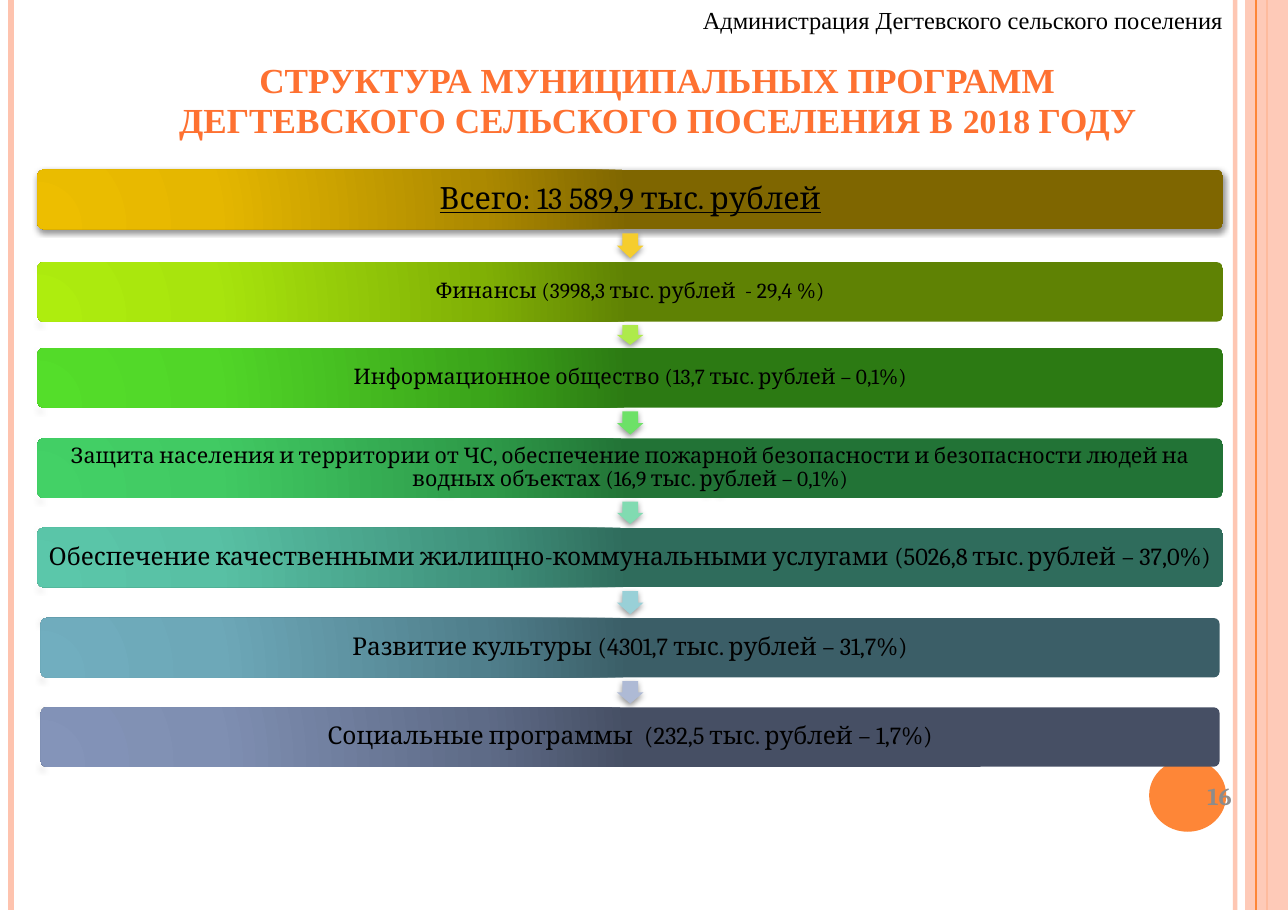
import pptx
import pptx.util
import pptx.dml.color
import pptx.enum.shapes
import pptx.enum.text
import pptx.oxml
import pptx.oxml.ns

Inches = pptx.util.Inches
Pt = pptx.util.Pt
SHAPE = pptx.enum.shapes.MSO_SHAPE
ALIGN = pptx.enum.text.PP_ALIGN
ANCHOR = pptx.enum.text.MSO_ANCHOR
NS = pptx.oxml.ns.nsdecls("a")

WIDTH, HEIGHT = 11.69, 8.26
BAR_HEIGHT = 0.54

# top, width, text, size, gradient colours, colour of the arrow below
PROGRAMS = [
    (1.54, 10.76, "Всего: 13 589,9 тыс. рублей", 20,
     ("EDBE00", "E5B700", "AC8900", "7F6600"), "F5CD2D"),
    (2.38, 10.76, "Финансы (3998,3 тыс. рублей  - 29,4 %)", 14,
     ("AEED0E", "A8E40D", "80B005", "5F8204"), "AEEA4B"),
    (3.16, 10.76, "Информационное общество (13,7 тыс. рублей – 0,1%)", 14,
     ("54DE2A", "51D628", "3BA51A", "2C7A13"), "6DE167"),
    (3.98, 10.76, "Защита населения и территории от ЧС, обеспечение пожарной "
     "безопасности и безопасности людей на водных объектах "
     "(16,9 тыс. рублей – 0,1%)", 14,
     ("43D166", "41CA63", "2E9B49", "227336"), "81DBB1"),
    (4.79, 10.76, "Обеспечение качественными жилищно-коммунальными услугами "
     "(5026,8 тыс. рублей – 37,0%)", 16,
     ("5BC7AA", "58C0A4", "40927C", "2F6C5C"), "99D0D7"),
    (5.61, 10.7, "Развитие культуры (4301,7 тыс. рублей – 31,7%)", 16,
     ("71AEBF", "6DA8B8", "507F8C", "3B5E67"), "AEBAD5"),
    (6.42, 10.7, "Социальные программы  (232,5 тыс. рублей – 1,7%)", 16,
     ("8494B9", "7F8FB2", "5E6B87", "464F64"), None),
]


def color(value):
    return pptx.dml.color.RGBColor.from_string(value)


def set_alpha(properties, percent):
    """Make the solid colour inside the given properties see-through."""
    for element in properties.iter(pptx.oxml.ns.qn("a:srgbClr")):
        element.append(pptx.oxml.parse_xml(f'<a:alpha {NS} val="{percent * 1000}"/>'))


def add_shape(slide, kind, left, top, width, height, fill=None):
    shape = slide.shapes.add_shape(
        kind, Inches(left), Inches(top), Inches(width), Inches(height))
    shape.shadow.inherit = False
    shape.line.fill.background()
    if fill:
        shape.fill.solid()
        shape.fill.fore_color.rgb = color(fill)
    return shape


def add_line(slide, x, hex_color, weight, alpha=100):
    line = slide.shapes.add_connector(
        pptx.enum.shapes.MSO_CONNECTOR.STRAIGHT,
        Inches(x), 0, Inches(x), Inches(HEIGHT))
    line.line.color.rgb = color(hex_color)
    line.line.width = Pt(weight)
    properties = line._element.spPr
    if alpha < 100:
        set_alpha(properties, alpha)
    properties.append(pptx.oxml.parse_xml(f"<a:effectLst {NS}/>"))


def add_shadow(shape):
    effects = shape._element.spPr.find(pptx.oxml.ns.qn("a:effectLst"))
    effects.append(pptx.oxml.parse_xml(
        f'<a:outerShdw {NS} blurRad="{Pt(4)}" dist="{Pt(1.6)}" dir="5400000" '
        'rotWithShape="0"><a:srgbClr val="000000"><a:alpha val="42000"/>'
        '</a:srgbClr></a:outerShdw>'))


def fill_radial(shape, colors):
    stops = "".join(
        f'<a:gs pos="{position}000"><a:srgbClr val="{value}"/></a:gs>'
        for position, value in zip((0, 30, 75, 100), colors))
    shape.fill.gradient()
    properties = shape._element.spPr
    properties.replace(
        properties.find(pptx.oxml.ns.qn("a:gradFill")),
        pptx.oxml.parse_xml(
            f'<a:gradFill {NS} rotWithShape="1"><a:gsLst>{stops}</a:gsLst>'
            '<a:path path="circle"><a:fillToRect l="5000" t="100000" '
            'r="120000" b="10000"/></a:path></a:gradFill>'))


def write(shape, *parts, font="Cambria", hex_color="000000", bold=False,
          underline=False, align=ALIGN.CENTER, anchor=ANCHOR.MIDDLE,
          spacing=None, margins=(0, 0)):
    """Write one paragraph made of (text, size) parts."""
    frame = shape.text_frame
    frame.word_wrap = True
    frame.vertical_anchor = anchor
    frame.margin_left = frame.margin_right = Inches(margins[0])
    frame.margin_top = frame.margin_bottom = Inches(margins[1])
    paragraph = frame.paragraphs[0]
    paragraph.alignment = align
    paragraph.line_spacing = spacing
    for text, size in parts:
        run = paragraph.add_run()
        run.text = text
        run.font.name = font
        run.font.size = Pt(size)
        run.font.bold = bold
        run.font.underline = underline
        run.font.color.rgb = color(hex_color)


def add_text(slide, left, top, width, height, *parts, **format_options):
    box = slide.shapes.add_textbox(
        Inches(left), Inches(top), Inches(width), Inches(height))
    write(box, *parts, **format_options)


def add_frame(slide, width, height):
    """Side stripes and the disc behind the page number."""
    add_line(slide, width - 0.48, "FEC3AE", 3, alpha=93)
    add_line(slide, 0.1, "FEC3AE", 4.5)
    add_line(slide, width - 0.19, "FE8637", 1.5)
    stripe = add_shape(slide, SHAPE.RECTANGLE, width - 0.39, 0, 0.39, height, "FEC3AE")
    set_alpha(stripe._element.spPr, 87)
    add_line(slide, width - 0.29, "FE8637", 0.75)
    add_shape(slide, SHAPE.OVAL, width - 1.26, height - 1.37, 0.7, 0.66, "FE8637")


def add_headings(slide, width, height):
    """Title, page number and name of the administration."""
    add_text(slide, 1.51, 0.55, 8.92, 0.73,
             ("СТРУКТУРА МУНИЦИПАЛЬНЫХ ПРОГРАММ ДЕГТЕВСКОГО СЕЛЬСКОГО ПОСЕЛЕНИЯ В ", 23),
             ("2018 ", 22), ("ГОДУ", 23),
             font="Times New Roman", hex_color="FE7131", bold=True,
             anchor=ANCHOR.TOP, spacing=Pt(26))
    add_text(slide, width - 1.29, height - 1.35, 0.78, 0.63, ("16", 16),
             hex_color="8C8C8C", bold=True, align=ALIGN.RIGHT)
    add_text(slide, width - 5.41, 0, 5.41, 0.37,
             ("Администрация Дегтевского сельского поселения", 16),
             font="Times New Roman", align=ALIGN.LEFT, anchor=ANCHOR.TOP,
             margins=(0.1, 0.05))


def add_arrow(slide, center, top, gap, fill):
    """Arrow pointing down in the middle of the gap between two bars."""
    length, breadth = 0.75 * gap, 0.24
    arrow = add_shape(slide, SHAPE.RIGHT_ARROW, center - length / 2,
                      top + (gap - breadth) / 2, length, breadth, fill)
    arrow.rotation = 90
    arrow.adjustments[0], arrow.adjustments[1] = 0.6, 0.5
    add_shadow(arrow)


def add_programs(slide, center):
    """Column of bars joined by arrows."""
    for index, (top, width, text, size, colors, arrow_color) in enumerate(PROGRAMS):
        bar = add_shape(slide, SHAPE.ROUNDED_RECTANGLE,
                        center - width / 2, top, width, BAR_HEIGHT)
        bar.adjustments[0] = 0.1
        fill_radial(bar, colors)
        add_shadow(bar)
        margin = round(size / 240, 2)
        write(bar, (text, size), underline=index == 0, spacing=0.9,
              margins=(margin, margin))
        if arrow_color:
            bottom = top + BAR_HEIGHT
            add_arrow(slide, center, bottom, PROGRAMS[index + 1][0] - bottom, arrow_color)


def main():
    presentation = pptx.Presentation()
    presentation.slide_width = Inches(WIDTH)
    presentation.slide_height = Inches(HEIGHT)
    slide = presentation.slides.add_slide(presentation.slide_layouts[6])
    add_frame(slide, WIDTH, HEIGHT)
    add_headings(slide, WIDTH, HEIGHT)
    add_programs(slide, 5.72)
    presentation.save("out.pptx")


if __name__ == "__main__":
    main()
